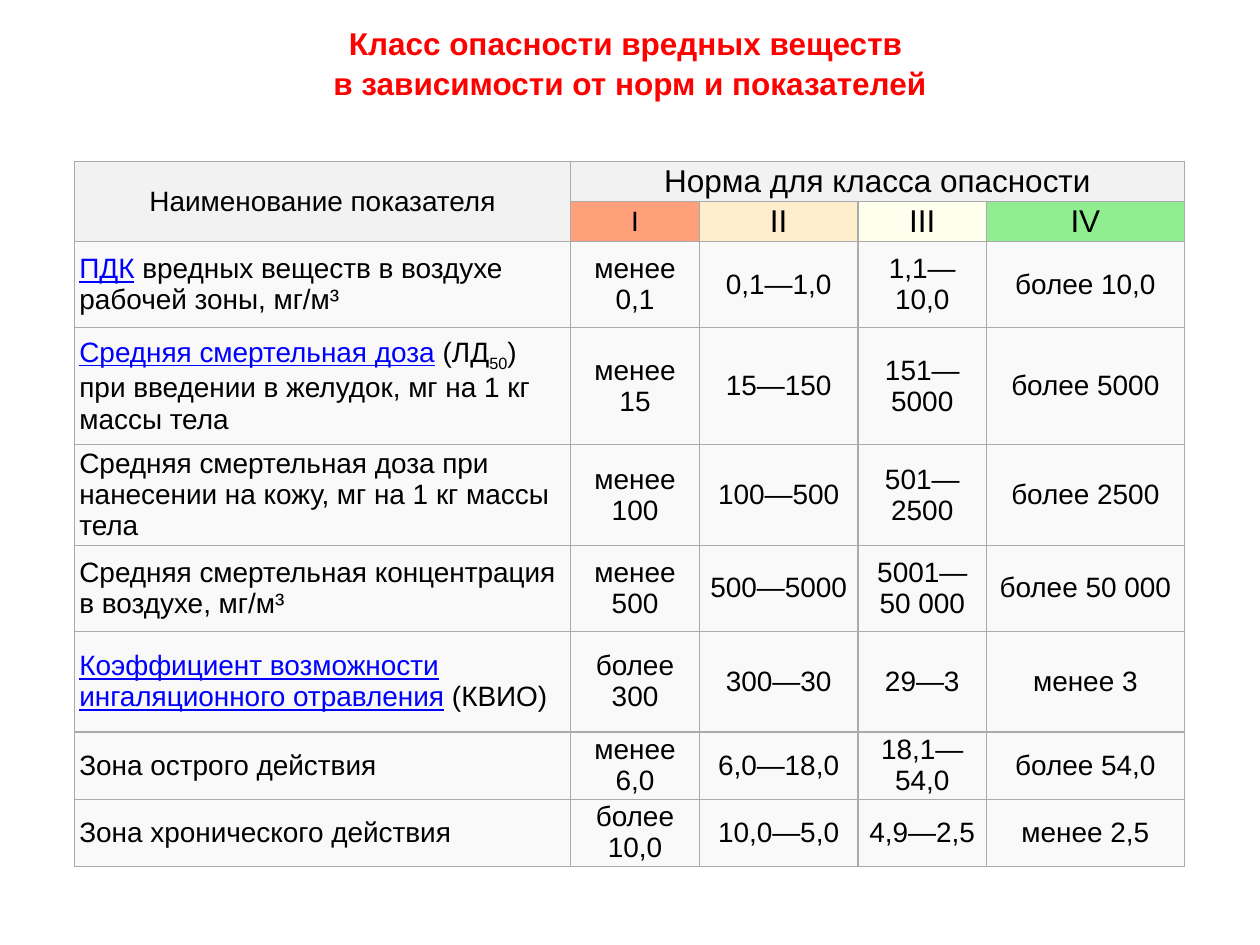
import pptx
import pptx.dml.color
import pptx.enum.text
import pptx.oxml.ns
import pptx.util
from lxml import etree

RGBColor = pptx.dml.color.RGBColor
Inches = pptx.util.Inches
Pt = pptx.util.Pt
Align = pptx.enum.text.PP_ALIGN
Anchor = pptx.enum.text.MSO_ANCHOR
qn = pptx.oxml.ns.qn

BLACK = RGBColor(0x00, 0x00, 0x00)
RED = RGBColor(0xFF, 0x00, 0x00)
LINK_BLUE = RGBColor(0x00, 0x00, 0xFF)
BORDER_GRAY = RGBColor(0xAA, 0xAA, 0xAA)
HEADER_GRAY = RGBColor(0xF2, 0xF2, 0xF2)
BODY_GRAY = RGBColor(0xF9, 0xF9, 0xF9)
SALMON = RGBColor(0xFF, 0xA0, 0x7A)
PEACH = RGBColor(0xFF, 0xEE, 0xCC)
IVORY = RGBColor(0xFF, 0xFF, 0xEE)
GREEN = RGBColor(0x90, 0xEE, 0x90)

COLUMN_WIDTHS = [3.94, 1.02, 1.26, 1.02, 1.57]
ROW_HEIGHTS = [0.17, 0.17, 0.68, 0.93, 0.8, 0.68, 0.8, 0.3, 0.42]
LINK = {"color": LINK_BLUE, "underline": True}

TITLE_LINES = ["Класс опасности вредных веществ ", "в зависимости от норм и показателей"]
CLASSES = [("I", SALMON, 16), ("II", PEACH, 18), ("III", IVORY, 18), ("IV", GREEN, 18)]
INDICATORS = [
    ([("ПДК", LINK), (" вредных веществ в воздухе рабочей зоны, мг/м³", {})],
     ["менее 0,1", "0,1—1,0", "1,1—10,0", "более 10,0"]),
    ([("Средняя смертельная доза", LINK), (" (ЛД", {}), ("50", {"baseline": -25000}),
      (") при введении в желудок, мг на 1 кг массы тела", {})],
     ["менее 15", "15—150", "151—5000", "более 5000"]),
    ([("Средняя смертельная доза при нанесении на кожу, мг на 1 кг массы тела", {})],
     ["менее 100", "100—500", "501—2500", "более 2500"]),
    ([("Средняя смертельная концентрация в воздухе, мг/м³", {})],
     ["менее 500", "500—5000", "5001—50 000", "более 50 000"]),
    ([("Коэффициент возможности ингаляционного отравления", LINK), (" (КВИО)", {})],
     ["более 300", "300—30", "29—3", "менее 3"]),
    ([("Зона острого действия", {})],
     ["менее 6,0", "6,0—18,0", "18,1—54,0", "более 54,0"]),
    ([("Зона хронического действия", {})],
     ["более 10,0", "10,0—5,0", "4,9—2,5", "менее 2,5"]),
]


def add_text(paragraph, text, size=16, color=BLACK, bold=False, underline=False, baseline=0):
    run = paragraph.add_run()
    run.text = text
    run.font.name = "Arial"
    run.font.size = Pt(size)
    run.font.color.rgb = color
    run.font.bold = bold
    run.font.underline = underline
    if baseline:
        run.font._element.set("baseline", str(baseline))


def add_borders(cell):
    properties = cell._tc.get_or_add_tcPr()
    for position, side in enumerate(["a:lnL", "a:lnR", "a:lnT", "a:lnB"]):
        line = etree.Element(qn(side), w=str(Pt(0.75)))
        fill = etree.SubElement(line, qn("a:solidFill"))
        etree.SubElement(fill, qn("a:srgbClr"), val=str(BORDER_GRAY))
        properties.insert(position, line)


def fill_cell(cell, pieces, fill=BODY_GRAY, alignment=Align.CENTER):
    cell.fill.solid()
    cell.fill.fore_color.rgb = fill
    cell.vertical_anchor = Anchor.MIDDLE
    cell.margin_left = cell.margin_right = Inches(0.04)
    cell.margin_top = cell.margin_bottom = Inches(0.02)
    paragraph = cell.text_frame.paragraphs[0]
    paragraph.alignment = alignment
    for text, text_format in pieces:
        add_text(paragraph, text, **text_format)


def add_title(slide):
    box = slide.shapes.add_textbox(Inches(0.43), Inches(0.13), Inches(9.14), Inches(1.01))
    frame = box.text_frame
    frame.word_wrap = True
    frame.vertical_anchor = Anchor.TOP
    for index, text in enumerate(TITLE_LINES):
        paragraph = frame.add_paragraph() if index else frame.paragraphs[0]
        paragraph.alignment = Align.CENTER
        paragraph.line_spacing = 1.05
        add_text(paragraph, text, size=18, color=RED, bold=True)


def add_hazard_table(slide):
    frame = slide.shapes.add_table(
        len(ROW_HEIGHTS), len(COLUMN_WIDTHS), Inches(0.59), Inches(1.28),
        Inches(sum(COLUMN_WIDTHS)), Inches(sum(ROW_HEIGHTS)))
    table = frame.table
    table.first_row = False
    table.horz_banding = False
    for column, width in zip(table.columns, COLUMN_WIDTHS):
        column.width = Inches(width)
    for row, height in zip(table.rows, ROW_HEIGHTS):
        row.height = Inches(height)
    for cell in table.iter_cells():
        add_borders(cell)

    table.cell(0, 0).merge(table.cell(1, 0))
    table.cell(0, 1).merge(table.cell(0, 4))
    fill_cell(table.cell(0, 0), [("Наименование показателя", {})], HEADER_GRAY)
    fill_cell(table.cell(0, 1), [("Норма для класса опасности", {"size": 18})], HEADER_GRAY)
    for column, (name, fill, size) in enumerate(CLASSES, start=1):
        fill_cell(table.cell(1, column), [(name, {"size": size})], fill)
    for row, (label, norms) in enumerate(INDICATORS, start=2):
        fill_cell(table.cell(row, 0), label, alignment=Align.LEFT)
        for column, norm in enumerate(norms, start=1):
            fill_cell(table.cell(row, column), [(norm, {})])


def main():
    presentation = pptx.Presentation()
    presentation.slide_width = Inches(10)
    presentation.slide_height = Inches(7.5)
    slide = presentation.slides.add_slide(presentation.slide_layouts[6])
    add_hazard_table(slide)
    add_title(slide)
    presentation.save("out.pptx")


if __name__ == "__main__":
    main()
